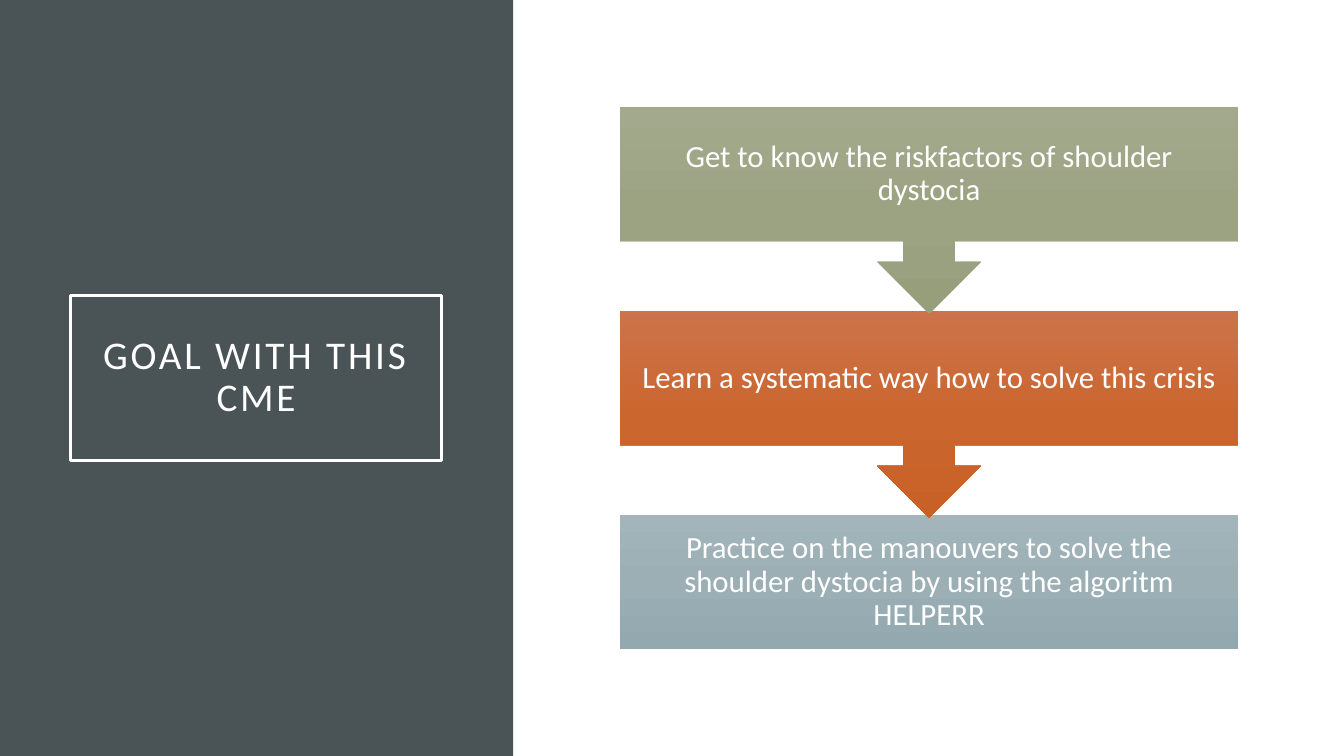
import copy

import pptx
import pptx.dml.color
import pptx.enum.shapes
import pptx.enum.text
import pptx.util

Inches = pptx.util.Inches
Pt = pptx.util.Pt
SHAPE = pptx.enum.shapes.MSO_SHAPE

COLORS = {
    "panel": "4A5356",
    "white": "FFFFFF",
    "green": ("A3A98C", "9CA383", "979E7C"),
    "orange": ("CC734B", "CB662F", "C86128"),
    "blue": ("A3B5BB", "9BAFB5", "93A9AF"),
}
GOALS = [
    ("Get to know the riskfactors of shoulder dystocia", "green"),
    ("Learn a systematic way how to solve this crisis", "orange"),
    ("Practice on the manouvers to solve the shoulder dystocia by using the algoritm HELPERR", "blue"),
]
FIRST_TOP, LAST_TOP = 1.06, 5.11
BOX_HEIGHT, CALLOUT_HEIGHT = 1.33, 2.05


def rgb(value):
    return pptx.dml.color.RGBColor.from_string(value)


def set_text(s, text, size, inset, spacing=None, after=0):
    tf = s.text_frame
    tf.word_wrap = True
    tf.auto_size = pptx.enum.text.MSO_AUTO_SIZE.NONE
    tf.vertical_anchor = pptx.enum.text.MSO_ANCHOR.MIDDLE
    tf.margin_left = tf.margin_right = Inches(inset)
    tf.margin_top = tf.margin_bottom = Inches(inset)
    p = tf.paragraphs[0]
    p.alignment = pptx.enum.text.PP_ALIGN.CENTER
    p.line_spacing = 0.9
    p.space_before = Pt(0)
    p.space_after = Pt(after)
    r = p.add_run()
    r.text = text
    r.font.name = "Calibri"
    r.font.size = Pt(size)
    r.font.color.rgb = rgb(COLORS["white"])
    if spacing:
        r.font._element.set("spc", str(spacing * 100))


def fill_gradient(s, colors):
    s.fill.gradient()
    s.fill.gradient_angle = 270
    stops = s.fill._xPr.find(pptx.oxml.ns.qn("a:gradFill")).find(pptx.oxml.ns.qn("a:gsLst"))
    stops.insert(1, copy.deepcopy(stops[0]))
    for i, stop in enumerate(s.fill.gradient_stops):
        stop.position = i / (len(colors) - 1)
        stop.color.rgb = rgb(colors[i])


def add_panel(slide):
    s = slide.shapes.add_shape(SHAPE.RECTANGLE, 0, 0, Inches(5.09), Inches(7.5))
    s.shadow.inherit = False
    s.fill.solid()
    s.fill.fore_color.rgb = rgb(COLORS["panel"])
    s.line.fill.background()
    slide.shapes._spTree.insert(2, s._element)


def format_title(slide, text):
    s = slide.shapes.title
    s.left, s.top, s.width, s.height = map(Inches, (0.7, 2.93, 3.68, 1.64))
    s.line.color.rgb = rgb(COLORS["white"])
    s.line.width = Pt(2.5)
    set_text(s, text, 28, 0.2, spacing=2)


def add_goal(slide, text, colors, top, has_arrow):
    kind = SHAPE.DOWN_ARROW_CALLOUT if has_arrow else SHAPE.RECTANGLE
    height = CALLOUT_HEIGHT if has_arrow else BOX_HEIGHT
    s = slide.shapes.add_shape(kind, Inches(6.15), Inches(top), Inches(6.13), Inches(height))
    s.shadow.inherit = False
    fill_gradient(s, colors)
    s.line.fill.background()
    set_text(s, text, 22, 0.17, after=7.7)


def main():
    prs = pptx.Presentation()
    prs.slide_width, prs.slide_height = Inches(13.33), Inches(7.5)
    slide = prs.slides.add_slide(prs.slide_layouts[5])
    add_panel(slide)
    format_title(slide, "GOAL WITH THIS CME")
    last = len(GOALS) - 1
    pitch = (LAST_TOP - FIRST_TOP) / last
    for i, (text, color) in reversed(list(enumerate(GOALS))):
        add_goal(slide, text, COLORS[color], FIRST_TOP + i * pitch, i < last)
    prs.save("out.pptx")


if __name__ == "__main__":
    main()
